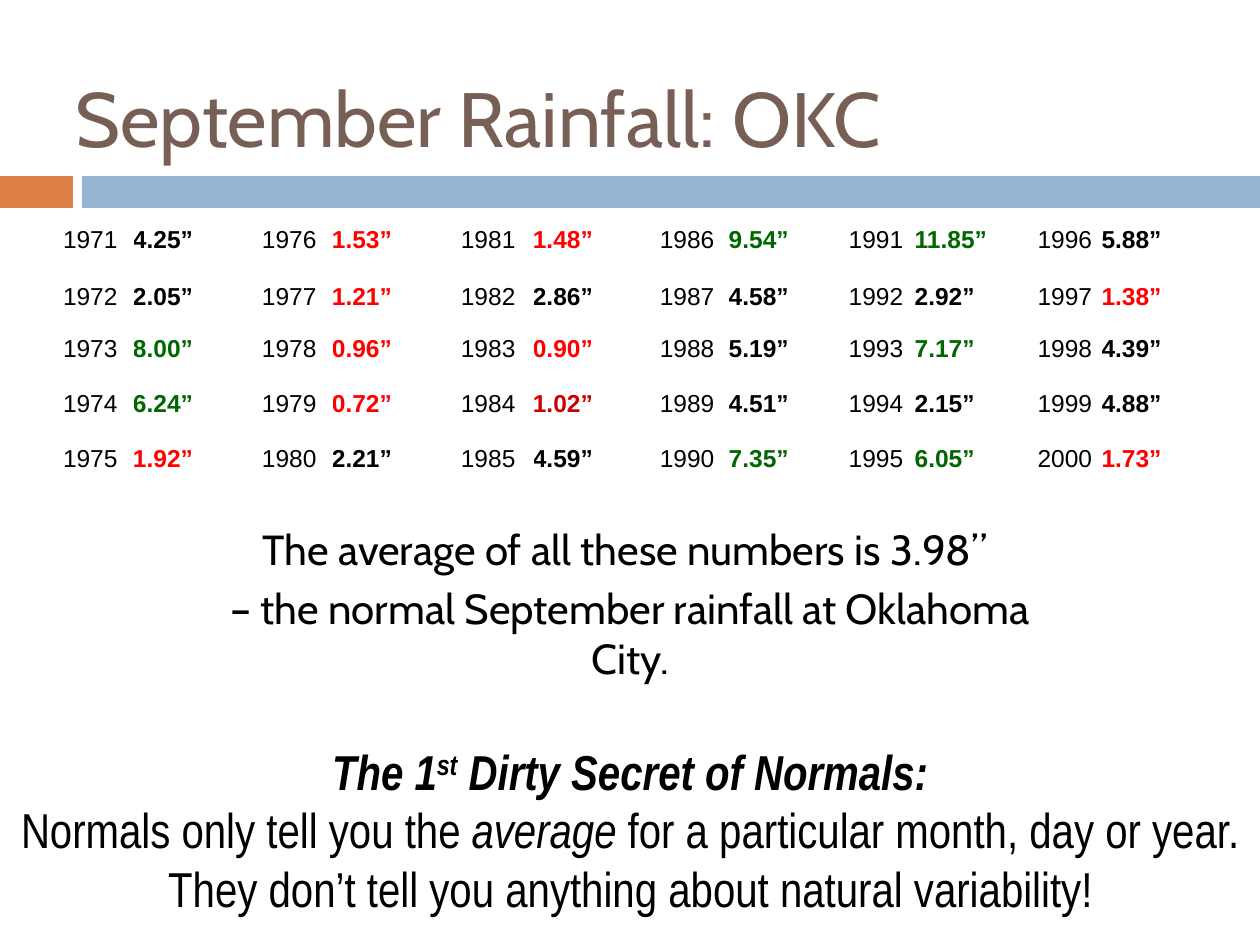
from pptx import Presentation
from pptx.dml.color import RGBColor
from pptx.enum.shapes import MSO_SHAPE
from pptx.enum.text import MSO_ANCHOR, PP_ALIGN
from pptx.util import Emu, Pt

PX = 914400 // 126
RECTANGLE = MSO_SHAPE.RECTANGLE
TOP, MIDDLE = MSO_ANCHOR.TOP, MSO_ANCHOR.MIDDLE
LEFT, CENTER = PP_ALIGN.LEFT, PP_ALIGN.CENTER

BROWN = RGBColor(0x77, 0x5F, 0x55)
ORANGE = RGBColor(0xDD, 0x80, 0x47)
BLUE = RGBColor(0x94, 0xB6, 0xD2)
BLACK = RGBColor(0x00, 0x00, 0x00)
RED = RGBColor(0xFF, 0x00, 0x00)
DARK_RED = RGBColor(0xCC, 0x00, 0x00)
GREEN = RGBColor(0x00, 0x66, 0x00)

# Content: each paragraph is a list of (text, extra font format) runs
TITLE = [[("September Rainfall: OKC", {})]]
AVERAGE = [
    [("The average of all these numbers is 3.98” ", {})],
    [("– the normal September rainfall at Oklahoma City.", {})],
]
HEADLINE = {"bold": True, "italic": True}
SECRET = [
    [("The 1", HEADLINE), ("st", {**HEADLINE, "baseline": 30000}),
     (" Dirty Secret of Normals:", HEADLINE)],
    [("Normals only tell you the ", {}), ("average", {"italic": True}),
     (" for a particular month, day or year. They don’t tell you "
      "anything about natural variability!", {})],
]

# Inches of rain, five years to a column group
FIRST_YEAR = 1971
RAINFALL = [
    (4.25, 2.05, 8.00, 6.24, 1.92),
    (1.53, 1.21, 0.96, 0.72, 2.21),
    (1.48, 2.86, 0.90, 1.02, 4.59),
    (9.54, 4.58, 5.19, 4.51, 7.35),
    (11.85, 2.92, 7.17, 2.15, 6.05),
    (5.88, 1.38, 4.39, 4.88, 1.73),
]
DRY_BELOW, WET_ABOVE = 2, 6
SPECIAL_COLORS = {1984: DARK_RED}

# Year, rainfall and gap widths of each group; the last has no gap
GROUP_WIDTHS = [(70, 79, 50), (70, 75, 54), (72, 67, 60),
                (69, 70, 50), (66, 82, 41), (64, 95)]
ROW_HEIGHTS = [57, 52, 55, 55, 69, 57, 63]

BARS = [((0, 176, 73, 32), ORANGE), ((82, 176, 1178, 32), BLUE)]
TITLE_BOX = (63, 38, 1134, 158)
TABLE_ORIGIN = (63, 220)
AVERAGE_BOX = (187, 517, 886, 125)
SECRET_BOX = (0, 735, 1260, 189)


def px(*lengths):
    return [Emu(length * PX) for length in lengths]


def add_run(paragraph, text, color, **font_format):
    run = paragraph.add_run()
    run.text = text
    run.font.color.rgb = color
    baseline = font_format.pop("baseline", None)
    for attribute, value in font_format.items():
        setattr(run.font, attribute, value)
    if baseline:
        run.font._element.set("baseline", str(baseline))


def add_text(slide, box, paragraphs, color, align, anchor=TOP, space=0, **font_format):
    frame = slide.shapes.add_textbox(*px(*box)).text_frame
    frame.word_wrap = True
    frame.vertical_anchor = anchor
    for index, runs in enumerate(paragraphs):
        paragraph = frame.paragraphs[0] if index == 0 else frame.add_paragraph()
        paragraph.alignment = align
        paragraph.space_before = Pt(space)
        for text, extra in runs:
            add_run(paragraph, text, color, **{**font_format, **extra})


def rain_color(year, inches):
    if year in SPECIAL_COLORS:
        return SPECIAL_COLORS[year]
    if inches < DRY_BELOW:
        return RED
    return GREEN if inches > WET_ABOVE else BLACK


def add_rainfall_table(slide):
    widths = [width for group in GROUP_WIDTHS for width in group]
    size = (sum(widths), sum(ROW_HEIGHTS))
    table = slide.shapes.add_table(
        len(ROW_HEIGHTS), len(widths), *px(*TABLE_ORIGIN, *size)).table
    table.first_row = table.horz_banding = False
    for column, width in zip(table.columns, px(*widths)):
        column.width = width
    for row, height in zip(table.rows, px(*ROW_HEIGHTS)):
        row.height = height
    for cell in table.iter_cells():
        cell.fill.background()
        cell.margin_left = cell.margin_right = 0

    # Year and rainfall pairs, read down each group
    year = FIRST_YEAR
    for group, depths in enumerate(RAINFALL):
        for row, inches in enumerate(depths):
            pair = [(str(year), BLACK, False),
                    (f"{inches:.2f}”", rain_color(year, inches), True)]
            for offset, (text, color, bold) in enumerate(pair):
                paragraph = table.cell(row, 3 * group + offset).text_frame.paragraphs[0]
                add_run(paragraph, text, color, name="Arial", size=Pt(14), bold=bold)
            year += 1

    # Full-width bottom row
    last = len(ROW_HEIGHTS) - 1
    table.cell(last, 0).merge(table.cell(last, len(widths) - 1))


def main():
    deck = Presentation()
    deck.slide_width, deck.slide_height = px(1260, 945)
    slide = deck.slides.add_slide(deck.slide_layouts[6])

    # Divider bars
    for box, color in BARS:
        bar = slide.shapes.add_shape(RECTANGLE, *px(*box))
        bar.shadow.inherit = False
        bar.fill.solid()
        bar.fill.fore_color.rgb = color
        bar.line.fill.background()

    # Title, table and the two statements below it
    add_text(slide, TITLE_BOX, TITLE, BROWN, LEFT, MIDDLE, name="Cabin", size=Pt(44))
    add_rainfall_table(slide)
    add_text(slide, AVERAGE_BOX, AVERAGE, BLACK, CENTER, space=5,
             name="Cabin", size=Pt(24))
    add_text(slide, SECRET_BOX, SECRET, BLACK, CENTER,
             name="Arial Narrow", size=Pt(28))

    deck.save("out.pptx")


if __name__ == "__main__":
    main()
